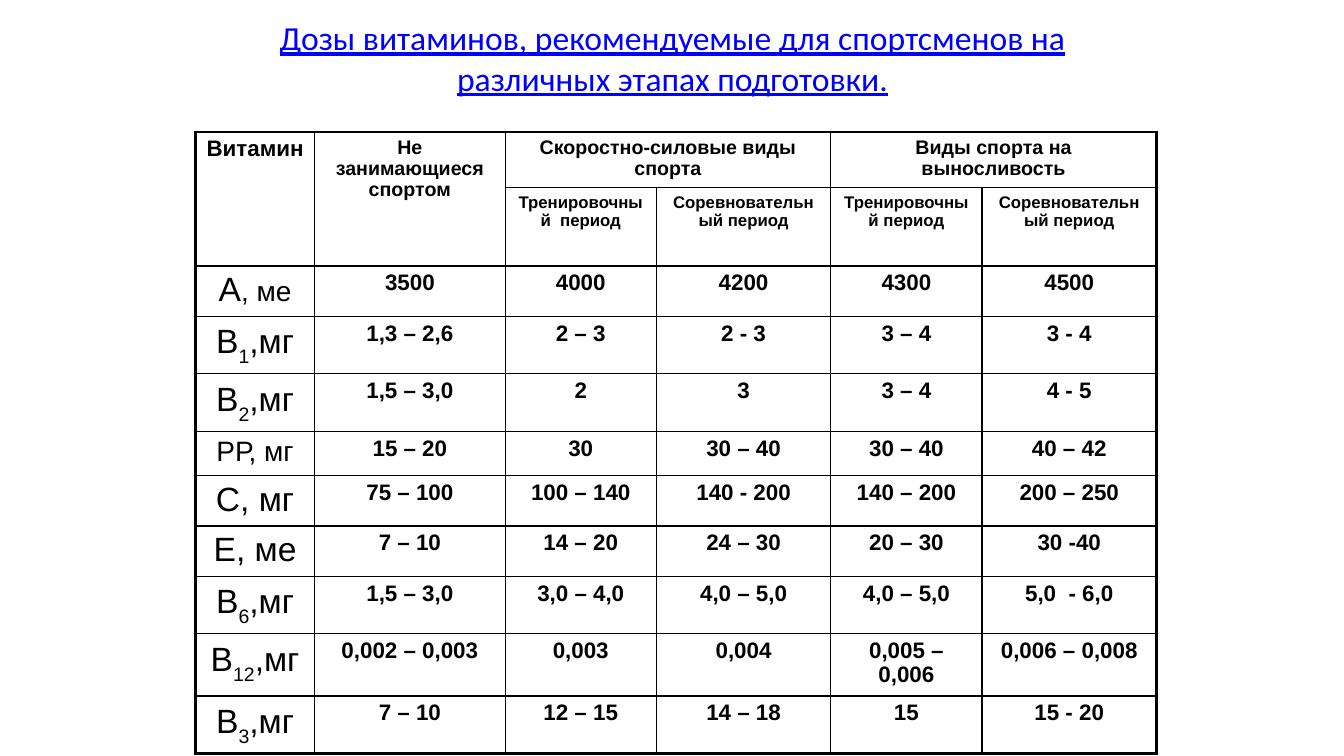
from pptx import Presentation
from pptx.dml.color import RGBColor
from pptx.enum.text import MSO_ANCHOR, PP_ALIGN
from pptx.oxml.ns import qn
from pptx.util import Inches, Pt
from lxml.etree import SubElement

BLACK = RGBColor(0, 0, 0)
BLUE = RGBColor(0, 0, 255)

TITLE = "Дозы витаминов, рекомендуемые для спортсменов на различных этапах подготовки."
COLUMN_WIDTHS = [1.18, 1.89, 1.5, 1.73, 1.5, 1.73]
HEADER_HEIGHTS = [0.52, 0.74]

GROUP_HEADERS = [
    ("Витамин", 16, 2, 1, 0),
    ("Не занимающиеся спортом", 14, 2, 1, 1),
    ("Скоростно-силовые виды спорта", 14, 1, 2, 2),
    ("Виды спорта на выносливость", 14, 1, 2, 4),
]
PERIODS = [
    "Тренировочный  период",
    "Соревновательный период",
    "Тренировочный период",
    "Соревновательный период",
]
DOSES = [
    (0.5, [("А", 24), (", ме", 20)],
     ["3500", "4000", "4200", "4300", "4500"]),
    (0.57, [("В", 24), ("1", 24, -30), (",мг", 24)],
     ["1,3 – 2,6", "2 – 3", "2 - 3", "3 – 4", "3 - 4"]),
    (0.57, [("В", 24), ("2", 24, -30), (",мг", 24)],
     ["1,5 – 3,0", "2", "3", "3 – 4", "4 - 5"]),
    (0.44, [("РР, мг", 20)],
     ["15 – 20", "30", "30 – 40", "30 – 40", "40 – 42"]),
    (0.5, [("С, мг", 24)],
     ["75 – 100", "100 – 140", "140 - 200", "140 – 200", "200 – 250"]),
    (0.5, [("Е, ме", 24)],
     ["7 – 10", "14 – 20", "24 – 30", "20 – 30", "30 -40"]),
    (0.57, [("В", 24), ("6", 24, -30), (",мг", 24)],
     ["1,5 – 3,0", "3,0 – 4,0", "4,0 – 5,0", "4,0 – 5,0", "5,0  - 6,0"]),
    (0.57, [("В", 24), ("12", 24, -30), (",мг", 24)],
     ["0,002 – 0,003", "0,003", "0,004", "0,005 – 0,006", "0,006 – 0,008"]),
    (0.57, [("В", 24), ("3", 24, -30), (",мг", 24)],
     ["7 – 10", "12 – 15", "14 – 18", "15", "15 - 20"]),
]


def add_run(paragraph, text, size, font_name, color, bold=False, baseline=0):
    run = paragraph.add_run()
    run.text = text
    run.font.size = Pt(size)
    run.font.name = font_name
    run.font.color.rgb = color
    run.font.bold = bold
    if baseline:
        run.font._element.set("baseline", str(baseline * 1000))
    return run


def add_title(slide, left, top, width, height):
    title = slide.shapes.add_textbox(Inches(left), Inches(top), Inches(width), Inches(height))
    frame = title.text_frame
    frame.word_wrap = True
    frame.vertical_anchor = MSO_ANCHOR.MIDDLE
    paragraph = frame.paragraphs[0]
    paragraph.alignment = PP_ALIGN.CENTER
    add_run(paragraph, TITLE, 24, "Calibri", BLUE).font.underline = True


def write_cell(cell, runs, bold=True, line_spacing=0.95, margin_top=0.06):
    cell.margin_left = cell.margin_right = Inches(0.1)
    cell.margin_top = Inches(margin_top)
    cell.margin_bottom = Inches(0.05)
    paragraph = cell.text_frame.paragraphs[0]
    paragraph.alignment = PP_ALIGN.CENTER
    paragraph.line_spacing = line_spacing
    for text, size, *baseline in runs:
        add_run(paragraph, text, size, "Arial", BLACK, bold, *baseline)


def outline_cell(cell, outer_sides):
    properties = cell._tc.get_or_add_tcPr()
    for side, is_outer in outer_sides.items():
        width = Pt(2.25) if is_outer else Pt(1)
        line = SubElement(properties, qn(f"a:ln{side}"), w=str(int(width)))
        fill = SubElement(line, qn("a:solidFill"))
        SubElement(fill, qn("a:srgbClr"), val=str(BLACK))
    cell.fill.background()


def add_dose_table(slide, left, top):
    heights = HEADER_HEIGHTS + [height for height, _, _ in DOSES]
    row_count, column_count = len(heights), len(COLUMN_WIDTHS)
    table = slide.shapes.add_table(
        row_count, column_count, Inches(left), Inches(top),
        Inches(sum(COLUMN_WIDTHS)), Inches(sum(heights))).table
    table.first_row = False
    table.horz_banding = False
    for column, width in zip(table.columns, COLUMN_WIDTHS):
        column.width = Inches(width)
    for row, height in zip(table.rows, heights):
        row.height = Inches(height)

    for r in range(row_count):
        for c in range(column_count):
            outline_cell(table.cell(r, c), {
                "L": c == 0, "R": c == column_count - 1,
                "T": r == 0, "B": r == row_count - 1})

    for text, size, row_span, column_span, c in GROUP_HEADERS:
        header = table.cell(0, c)
        last = table.cell(row_span - 1, c + column_span - 1)
        header.merge(last)
        write_cell(header, [(text, size)])
        if c + column_span == column_count:
            header._tc.tcPr.find(qn("a:lnR")).set("w", str(int(Pt(2.25))))
    for c, period in enumerate(PERIODS, start=2):
        write_cell(table.cell(1, c), [(period, 12)])

    for r, (_, vitamin, doses) in enumerate(DOSES, start=len(HEADER_HEIGHTS)):
        spacing = 0.93 if len(vitamin) == 3 else 0.95
        write_cell(table.cell(r, 0), vitamin, False, spacing, 0.07)
        for c, dose in enumerate(doses, start=1):
            write_cell(table.cell(r, c), [(dose, 16)])


def main():
    presentation = Presentation()
    presentation.slide_width = Inches(13.33)
    presentation.slide_height = Inches(7.5)
    slide = presentation.slides.add_slide(presentation.slide_layouts[6])
    add_title(slide, 2.17, 0.12, 9, 0.9)
    add_dose_table(slide, 1.94, 1.31)
    presentation.save("out.pptx")


if __name__ == "__main__":
    main()
